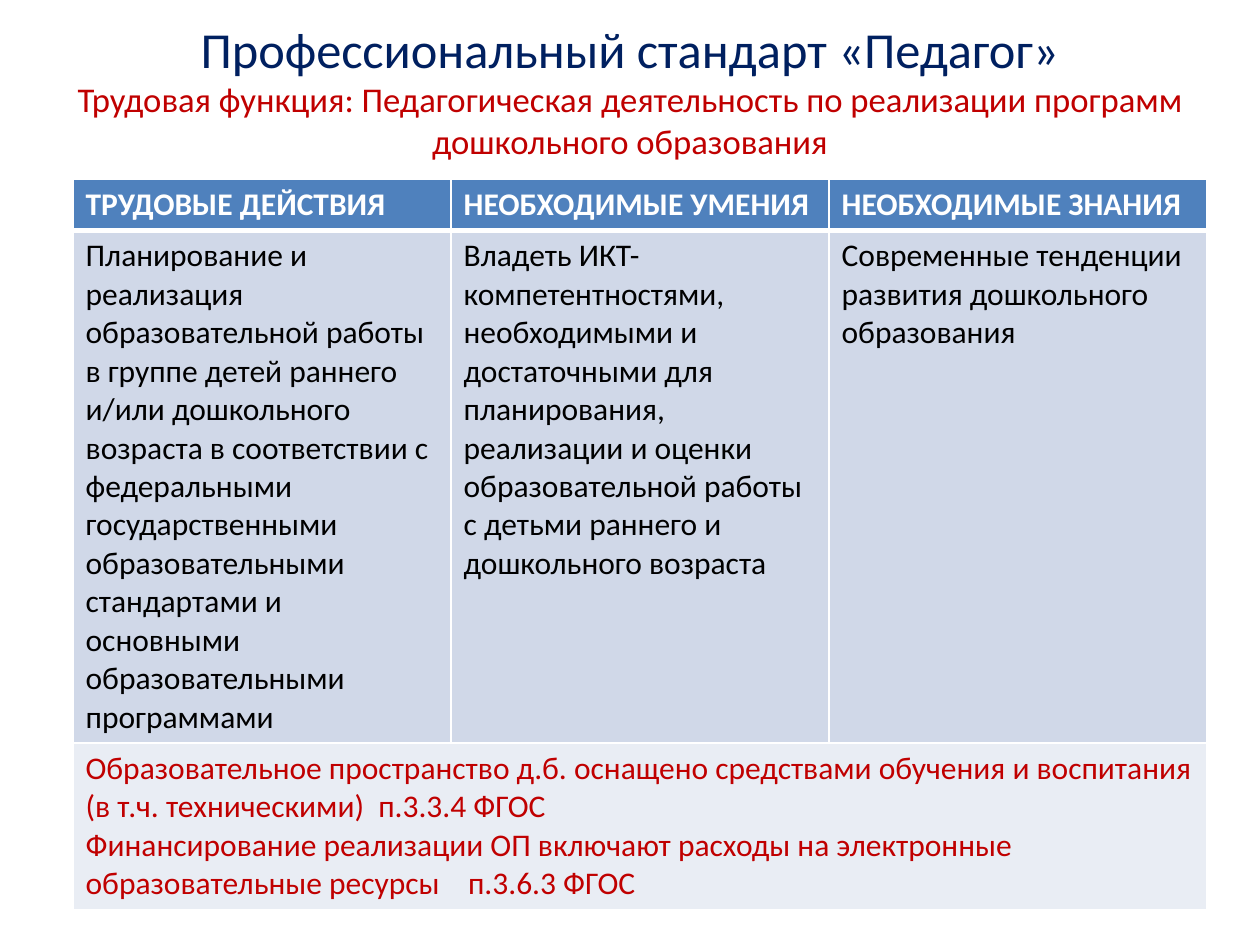
from dataclasses import dataclass

from lxml.etree import SubElement
from pptx import Presentation
from pptx.dml.color import RGBColor as RGB
from pptx.enum.text import MSO_ANCHOR as Anchor, MSO_AUTO_SIZE as Fit, PP_ALIGN as Align
from pptx.oxml.ns import qn
from pptx.util import Inches, Pt


@dataclass(frozen=True)
class Theme:
    font: str = "Calibri"
    navy: str = "002060"
    red: str = "C00000"
    white: str = "FFFFFF"
    black: str = "000000"
    head: str = "4F81BD"
    band: str = "D0D8E8"
    pale: str = "E9EDF4"
    title: float = 28.8
    sub: float = 19.8
    body: float = 18
    thin: float = 1
    thick: float = 3


@dataclass(frozen=True)
class Row:
    texts: tuple[str, ...]
    height: float
    fill: str
    ink: str
    bold: bool = False
    top: float = Theme.thin
    bottom: float = Theme.thin


T = Theme()
WIDE, HIGH = 10, 7.5
COLS, COL = 3, 3  # count and width in inches

ROWS = (
    Row(("ТРУДОВЫЕ ДЕЙСТВИЯ", "НЕОБХОДИМЫЕ УМЕНИЯ", "НЕОБХОДИМЫЕ ЗНАНИЯ"),
        0.41, T.head, T.white, bold=True, bottom=T.thick),
    Row(("Планирование и реализация образовательной работы в группе детей раннего "
         "и/или дошкольного возраста в соответствии с федеральными государственными "
         "образовательными стандартами и основными образовательными программами",
         "Владеть ИКТ-компетентностями, необходимыми и достаточными для планирования, "
         "реализации и оценки образовательной работы с детьми раннего и дошкольного возраста",
         "Современные тенденции развития дошкольного образования"),
        4.05, T.band, T.black, top=T.thick),
    Row(("Образовательное пространство д.б. оснащено средствами обучения и воспитания "
         "(в т.ч. техническими)  п.3.3.4 ФГОС\n"
         "Финансирование реализации ОП включают расходы на электронные "
         "образовательные ресурсы    п.3.6.3 ФГОС",),
        1.25, T.pale, T.red),
)


def style(run, size: float, ink: str, bold: bool = False) -> None:
    font = run.font
    font.name, font.size, font.bold = T.font, Pt(size), bold
    font.color.rgb = RGB.from_string(ink)


def edge(cell, side: str, width: float) -> None:
    line = SubElement(cell._tc.get_or_add_tcPr(), qn(f"a:ln{side}"), w=str(Pt(width)))
    fill = SubElement(line, qn("a:solidFill"))
    SubElement(fill, qn("a:srgbClr"), val=T.white)


def paint(cell, row: Row) -> None:
    for side, width in zip("LRTB", (T.thin, T.thin, row.top, row.bottom)):
        edge(cell, side, width)
    cell.fill.solid()
    cell.fill.fore_color.rgb = RGB.from_string(row.fill)


def add_title(slide) -> None:
    shape = slide.shapes.title
    shape.left, shape.top = Inches(0.5), Inches(0.17)
    shape.width, shape.height = Inches(9), Inches(1.08)
    frame = shape.text_frame
    frame.text = ("Профессиональный стандарт «Педагог»\v"
                  "Трудовая функция: Педагогическая деятельность по реализации программ "
                  "дошкольного образования")
    frame.word_wrap, frame.auto_size = True, Fit.NONE
    frame.vertical_anchor = Anchor.MIDDLE
    para = frame.paragraphs[0]
    para.alignment = Align.CENTER
    head, sub = para.runs
    style(head, T.title, T.navy)
    style(sub, T.sub, T.red)
    # The line break takes the size of the heading
    gap = para._p.find(qn("a:br"))
    SubElement(gap, qn("a:rPr"), sz=str(round(T.title * 100)))


def add_grid(slide) -> None:
    high = sum(row.height for row in ROWS)
    table = slide.shapes.add_table(len(ROWS), COLS, Inches(0.58), Inches(1.42),
                                   Inches(COLS * COL), Inches(high)).table
    for r, row in enumerate(ROWS):
        table.rows[r].height = Inches(row.height)
        for c in range(COLS):
            paint(table.cell(r, c), row)
        # A single text spans the whole row
        if len(row.texts) == 1:
            table.cell(r, 0).merge(table.cell(r, COLS - 1))
        for c, text in enumerate(row.texts):
            frame = table.cell(r, c).text_frame
            frame.text = text
            for para in frame.paragraphs:
                for run in para.runs:
                    style(run, T.body, row.ink, row.bold)


def main() -> None:
    deck = Presentation()
    deck.slide_width, deck.slide_height = Inches(WIDE), Inches(HIGH)
    slide = deck.slides.add_slide(deck.slide_layouts[5])
    add_title(slide)
    add_grid(slide)
    deck.save("out.pptx")


if __name__ == "__main__":
    main()
